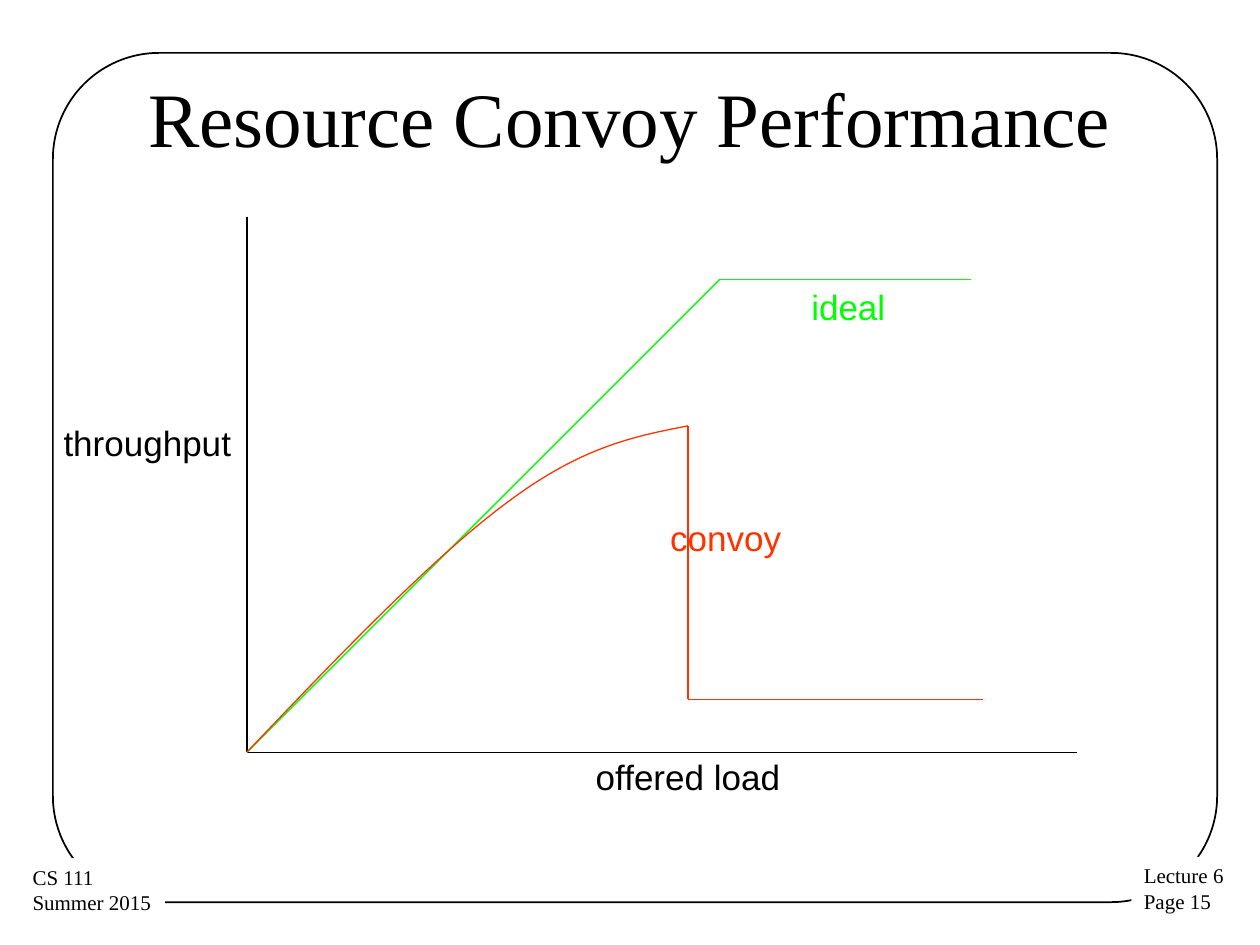
from lxml import etree
from pptx import Presentation
from pptx.dml.color import RGBColor
from pptx.enum.shapes import MSO_CONNECTOR, MSO_SHAPE
from pptx.enum.text import MSO_ANCHOR, MSO_AUTO_SIZE, PP_ALIGN
from pptx.oxml.ns import qn
from pptx.util import Emu, Pt

PX = 9144
TITLE_ONLY = 5
BLACK = RGBColor(0x00, 0x00, 0x00)
WHITE = RGBColor(0xFF, 0xFF, 0xFF)
GREEN = RGBColor(0x00, 0xFF, 0x00)
RED = RGBColor(0xFF, 0x33, 0x00)
STRAIGHT = MSO_CONNECTOR.STRAIGHT
RECT, ROUND_RECT = MSO_SHAPE.RECTANGLE, MSO_SHAPE.ROUNDED_RECTANGLE
LEFT, CENTER = PP_ALIGN.LEFT, PP_ALIGN.CENTER
TOP, MIDDLE = MSO_ANCHOR.TOP, MSO_ANCHOR.MIDDLE
NO_FIT, GROW = MSO_AUTO_SIZE.NONE, MSO_AUTO_SIZE.SHAPE_TO_FIT_TEXT

TITLE = {"name": "Times New Roman", "size": Pt(44)}
FOOTER = {"name": "Times New Roman", "size": Pt(12)}
LABEL = {"name": "Arial", "size": Pt(20)}


def px(*values):
    """Turn px lengths into EMU."""
    return [Emu(v * PX) for v in values]


class Deck:
    """Style helpers bound to the current slide."""

    def __init__(self, prs):
        self.s = prs.slides.add_slide(prs.slide_layouts[TITLE_ONLY])

    def set_text(self, sp, text, font, color=BLACK, align=LEFT, **frame):
        """Fill a shape with formatted paragraphs."""
        tf = sp.text_frame
        layout = {"word_wrap": False, "auto_size": GROW, "vertical_anchor": TOP}
        for key, value in {**layout, **frame}.items():
            setattr(tf, key, value)
        tf.text = text
        for p in tf.paragraphs:
            p.alignment = align
            for key, value in font.items():
                setattr(p.runs[0].font, key, value)
            p.runs[0].font.color.rgb = color

    def stroke(self, sp, color, width=0.75):
        """Set the outline of a shape or connector."""
        sp.line.color.rgb = color
        sp.line.width = Pt(width)

    def title(self, text, box):
        """Place and format the title placeholder."""
        sp = self.s.shapes.title
        sp.left, sp.top, sp.width, sp.height = px(*box)
        self.set_text(sp, text, TITLE, align=CENTER, word_wrap=True,
                      auto_size=NO_FIT, vertical_anchor=MIDDLE)

    def frame(self, box, radius):
        """Draw the rounded slide border."""
        sp = self.s.shapes.add_shape(ROUND_RECT, *px(*box))
        sp.adjustments[0] = radius
        sp.shadow.inherit = False
        sp.fill.background()
        self.stroke(sp, BLACK, 1)

    def footer(self, text, box):
        """Add a white footer block."""
        sp = self.s.shapes.add_shape(RECT, *px(*box))
        sp.shadow.inherit = False
        sp.fill.solid()
        sp.fill.fore_color.rgb = WHITE
        sp.line.fill.background()
        self.set_text(sp, text, FOOTER)

    def label(self, text, box, color=BLACK, align=LEFT):
        """Add a chart label."""
        sp = self.s.shapes.add_textbox(*px(*box))
        self.set_text(sp, text, LABEL, color, align)

    def lines(self, points, color):
        """Join consecutive points with straight connectors."""
        for start, end in zip(points, points[1:]):
            sp = self.s.shapes.add_connector(STRAIGHT, *px(*start, *end))
            self.stroke(sp, color)
            etree.SubElement(sp._element.spPr, qn("a:effectLst"))

    def curve(self, start, controls, color):
        """Draw cubic segments, three control points to each."""
        fb = self.s.shapes.build_freeform(*start, scale=PX)
        fb.add_line_segments(controls, close=False)
        sp = fb.convert_to_shape()
        segments = list(sp._element.iter(qn("a:lnTo")))
        for i in range(0, len(segments), 3):
            bezier = etree.Element(qn("a:cubicBezTo"))
            segments[i].addprevious(bezier)
            for segment in segments[i:i + 3]:
                bezier.append(segment[0])
                segment.getparent().remove(segment)
        sp.shadow.inherit = False
        sp.fill.background()
        self.stroke(sp, color)


def main():
    """Build the throughput slide."""
    prs = Presentation()
    prs.slide_width, prs.slide_height = px(1000, 750)
    deck = Deck(prs)
    origin, knee, peak = (196, 597), (571, 222), (546, 338)

    deck.frame((42, 42, 924, 674), 0.125)
    deck.footer("Lecture 6\nPage 15", (898, 680, 84, 51))
    deck.footer("CS 111\nSummer 2015", (16, 681, 115, 51))
    deck.title("Resource Convoy Performance", (50, 30, 900, 125))

    deck.lines([(196, 172), origin, (855, 597)], BLACK)
    deck.label("throughput ", (37, 330, 160, 43), align=CENTER)
    deck.label("offered load", (463, 595, 167, 43))

    deck.lines([origin, knee, (771, 222)], GREEN)
    deck.label("ideal", (634, 222, 79, 43), GREEN)

    deck.label("convoy", (522, 405, 108, 43), RED)
    deck.curve(origin, [(271, 518), (346, 440), (405, 397),
                        (463, 354), (505, 346), peak], RED)
    deck.lines([peak, (546, 555), (780, 555)], RED)

    prs.save("out.pptx")


if __name__ == "__main__":
    main()
